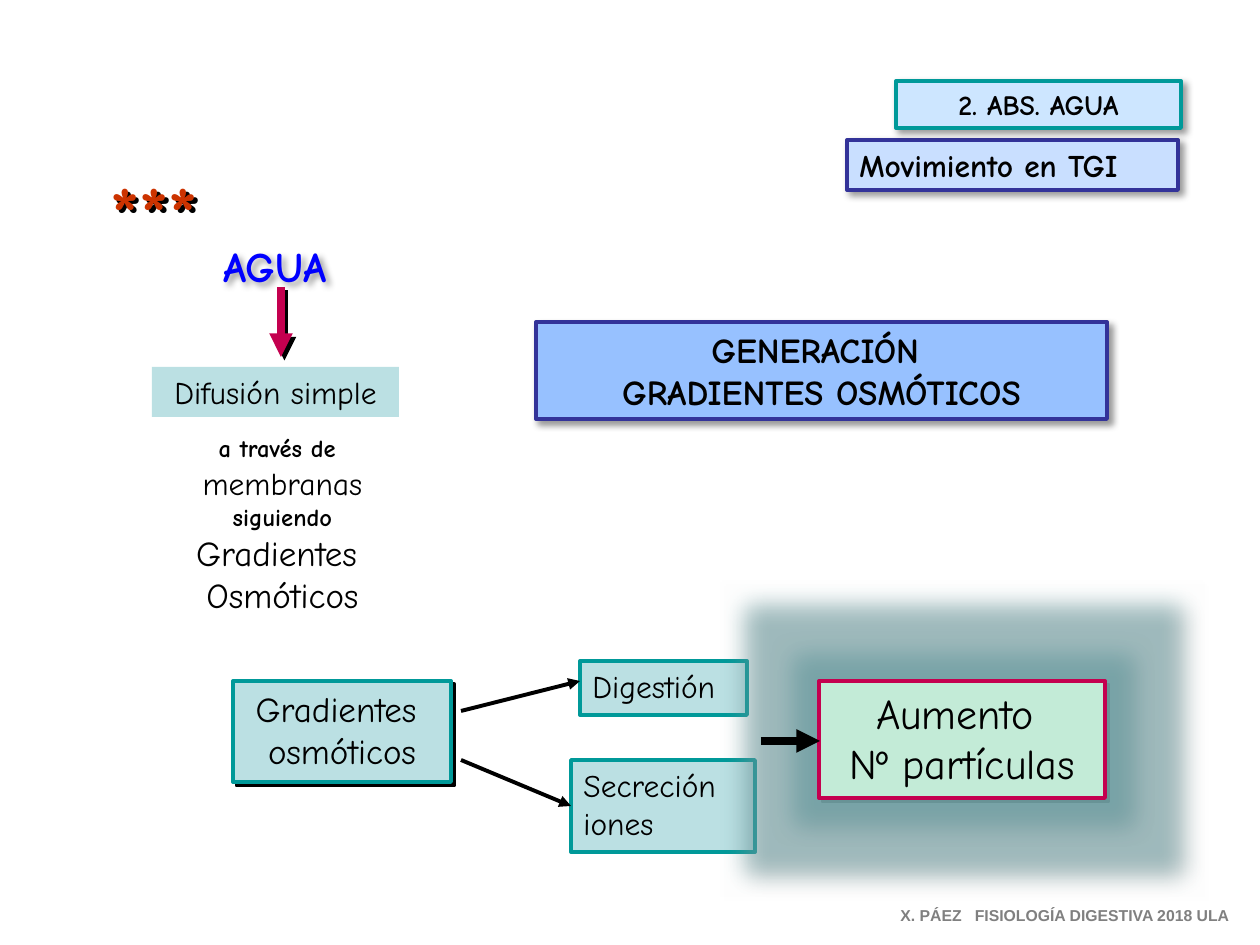
import pptx
import pptx.dml.color
import pptx.enum.shapes
import pptx.enum.text
import pptx.oxml.ns
import pptx.util
from lxml import etree

SCALE = 914400 / 126
FONT = "Comic Neue"
COLORS = {
    "black": "000000", "gray": "808080", "blue": "0000FF", "red": "CC3300",
    "navy": "333399", "teal": "009999", "crimson": "C4004F", "aqua": "BBE0E3",
    "mint": "C3EBD7", "sky": "97C1FF", "pale": "C9DFFF", "ice": "CDE6FF",
    "halo": "5B9EA4",
}
SOFT = ("black", 40, 4, 3)
HARD = ("black", 100, 0, 2.8)
HARD_GRAY = ("gray", 100, 0, 2.8)
CENTER = pptx.enum.text.PP_ALIGN.CENTER
LEFT = pptx.enum.text.PP_ALIGN.LEFT


def px(value):
    return pptx.util.Emu(round(value * SCALE))


def rgb(name):
    return pptx.dml.color.RGBColor.from_string(COLORS[name])


def add_child(parent, tag, **attributes):
    child = etree.SubElement(parent, pptx.oxml.ns.qn(tag))
    for key, value in attributes.items():
        child.set(key, str(value))
    return child


def add_color(parent, name, opacity):
    color = add_child(parent, "a:srgbClr", val=COLORS[name])
    add_child(color, "a:alpha", val=opacity * 1000)


def set_effects(shape, shadow=None, glow=None):
    effects = add_child(shape._element.spPr, "a:effectLst")
    if glow:
        name, opacity, radius = glow
        halo = add_child(effects, "a:glow", rad=pptx.util.Pt(radius))
        add_color(halo, name, opacity)
    if shadow:
        name, opacity, blur, distance = shadow
        outer = add_child(effects, "a:outerShdw", blurRad=pptx.util.Pt(blur),
                          dist=pptx.util.Pt(distance), dir=2700000,
                          algn="ctr", rotWithShape=0)
        add_color(outer, name, opacity)


def add_box(page, place, paragraphs, align=LEFT, wrap=False, fill=None,
            line=None, shadow=None, glow=None, color="black", font=FONT):
    box = page.shapes.add_textbox(*map(px, place))
    if fill:
        box.fill.solid()
        box.fill.fore_color.rgb = rgb(fill)
    if line:
        box.line.color.rgb = rgb(line)
        box.line.width = pptx.util.Pt(2.25)
    if shadow or glow:
        set_effects(box, shadow, glow)
    frame = box.text_frame
    frame.word_wrap = wrap
    frame.auto_size = pptx.enum.text.MSO_AUTO_SIZE.SHAPE_TO_FIT_TEXT
    for index, spans in enumerate(paragraphs):
        para = frame.add_paragraph() if index else frame.paragraphs[0]
        para.alignment = align
        for text, size, bold in spans:
            span = para.add_run()
            span.text = text
            span.font.name = font
            span.font.size = pptx.util.Pt(size)
            span.font.bold = bold
            span.font.color.rgb = rgb(color)


def add_arrow(page, start, end, width=2.25, color="black", shadow=None):
    arrow = page.shapes.add_connector(
        pptx.enum.shapes.MSO_CONNECTOR.STRAIGHT, *map(px, start + end))
    arrow.line.color.rgb = rgb(color)
    arrow.line.width = pptx.util.Pt(width)
    add_child(arrow.line._get_or_add_ln(), "a:tailEnd", type="triangle")
    set_effects(arrow, shadow)


def lines(size, bold, *texts):
    return [[(text, size, bold)] for text in texts]


def add_headings(page):
    add_box(page, (536, 322, 571, 97),
            lines(20, True, "GENERACIÓN ", "GRADIENTES OSMÓTICOS"),
            CENTER, True, "sky", "navy", SOFT)
    add_box(page, (847, 140, 331, 50), lines(18, True, "Movimiento en TGI"),
            fill="pale", line="navy", shadow=SOFT)
    add_box(page, (896, 81, 285, 47), lines(16, True, "2. ABS. AGUA"),
            CENTER, True, "ice", "teal", SOFT)


def add_diffusion(page):
    add_box(page, (98, 158, 149, 106), lines(44, True, "***"),
            color="red", shadow=HARD)
    add_box(page, (202, 234, 146, 63), lines(24, True, "AGUA"), CENTER,
            color="blue", shadow=SOFT)
    add_arrow(page, (281, 287), (281, 357), 4.5, "crimson", HARD)
    add_box(page, (152, 367, 247, 50), lines(18, False, "Difusión simple"),
            CENTER, fill="aqua")
    route = [[("a través de", 14, True), (" ", 18, False)]]
    route += lines(18, False, "membranas")
    route += lines(14, True, "siguiendo")
    route += lines(20, False, "Gradientes ", "Osmóticos")
    add_box(page, (174, 420, 217, 204), route, CENTER)


def add_gradients(page):
    add_box(page, (233, 681, 218, 101),
            lines(20, False, "Gradientes ", "osmóticos"),
            CENTER, True, "aqua", "teal", HARD)
    add_box(page, (580, 661, 167, 54), lines(18, False, "Digestión"),
            fill="aqua", line="teal")
    add_box(page, (571, 760, 184, 92), lines(18, False, "Secreción", "iones"),
            fill="aqua", line="teal")
    add_box(page, (819, 681, 286, 117),
            lines(24, False, "Aumento ", "Nº partículas"), CENTER,
            fill="mint", line="crimson", shadow=HARD_GRAY,
            glow=("halo", 40, 28))
    add_arrow(page, (461, 711), (580, 681))
    add_arrow(page, (461, 760), (571, 806))
    add_arrow(page, (761, 741), (820, 741), 4.5)


def main():
    deck = pptx.Presentation()
    deck.slide_width, deck.slide_height = px(1260), px(945)
    page = deck.slides.add_slide(deck.slide_layouts[6])
    add_headings(page)
    add_diffusion(page)
    add_gradients(page)
    add_box(page, (888, 900, 358, 31),
            lines(9, True, "X. PÁEZ   FISIOLOGÍA DIGESTIVA 2018 ULA"),
            color="gray", font="Arial")
    deck.save("out.pptx")


if __name__ == "__main__":
    main()
